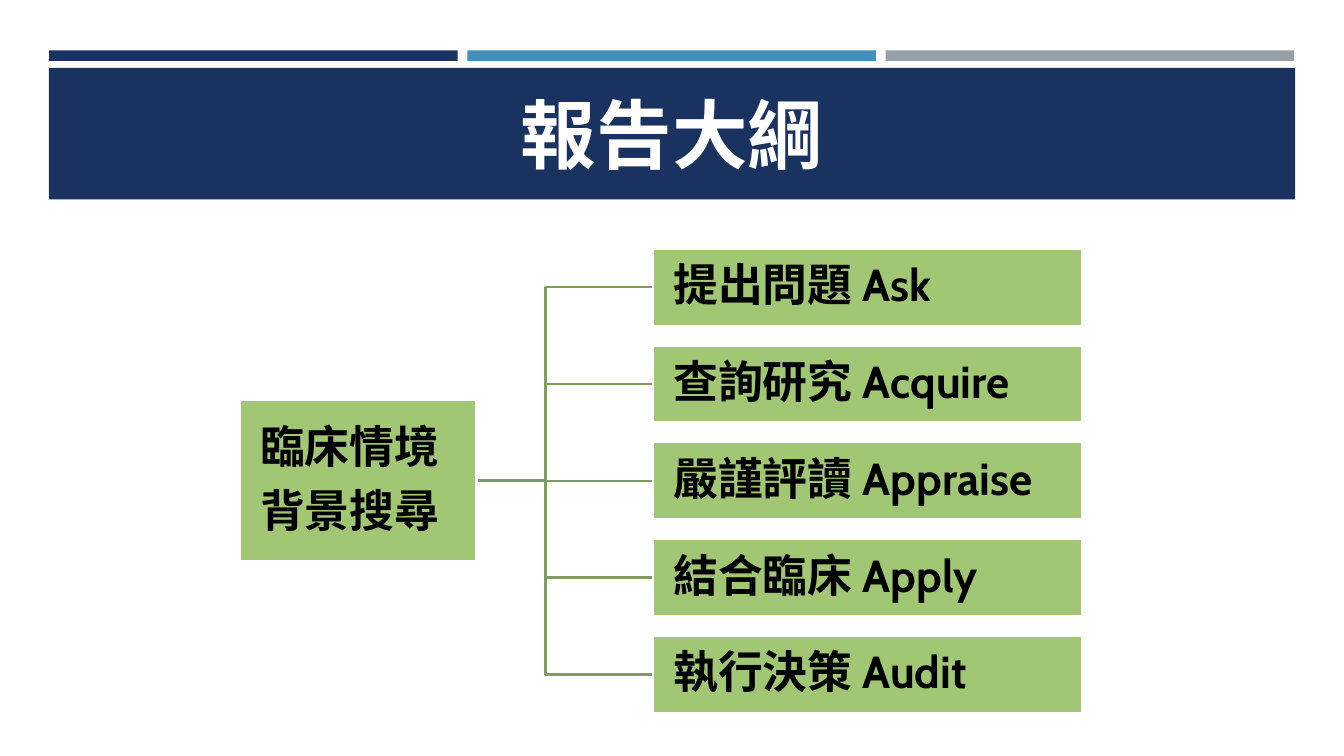
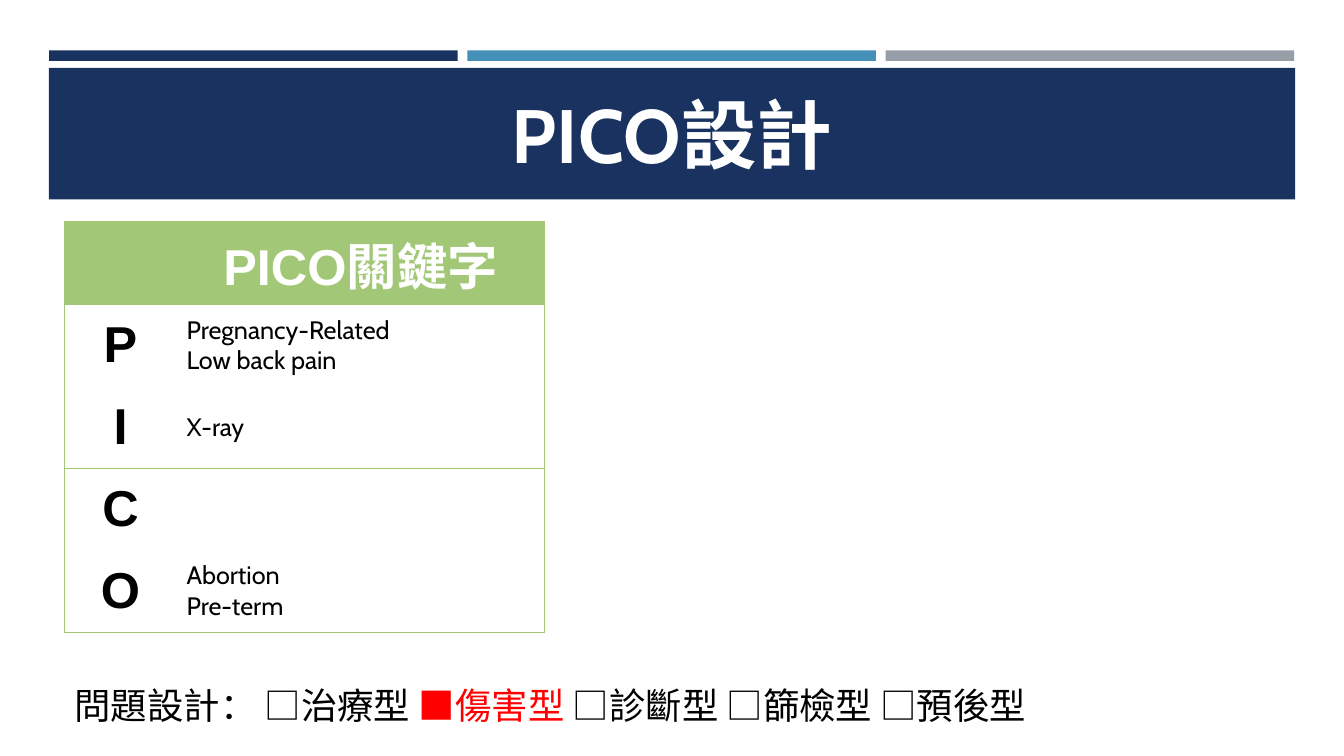
from dataclasses import dataclass

from lxml import etree
from pptx import Presentation
from pptx import util as u
from pptx.dml.color import RGBColor
from pptx.enum import shapes, text
from pptx.oxml import ns


@dataclass(frozen=True)
class Theme:
    navy: str = "1A3260"
    blue: str = "4590B8"
    grey: str = "969FA7"
    green: str = "A1C775"
    table_green: str = "A2C777"
    branch: str = "809C5E"
    white: str = "FFFFFF"
    black: str = "000000"
    red: str = "FF0000"
    font: str = "Cabin"
    table_font: str = "Arial"
    title_size: int = 54
    keyword_size: int = 36
    outline_size: int = 32
    question_size: int = 26
    body_size: int = 18
    line: float = 1.75
    border: float = 0.75


theme = Theme()
presentation = Presentation()
presentation.slide_width = u.Inches(13.333)
presentation.slide_height = u.Inches(7.5)
column = presentation.slide_width / 100
row = presentation.slide_height / 100
layout = presentation.slide_layouts[5]


def area(left, top, width, height):
    return int(left * column), int(top * row), int(width * column), int(height * row)


def write(frame, paragraphs, size, bold=False, font=theme.font, align=text.PP_ALIGN.LEFT):
    for index, runs in enumerate(paragraphs):
        paragraph = frame.paragraphs[0] if index == 0 else frame.add_paragraph()
        paragraph.alignment = align
        for words, color in runs:
            run = paragraph.add_run()
            run.text = words
            run.font.name = font
            run.font.size = u.Pt(size)
            run.font.bold = bold
            run.font.color.rgb = RGBColor.from_string(color)


slides = []
for heading in ("報告大綱", "PICO設計"):
    slide = presentation.slides.add_slide(layout)
    slides.append(slide)
    title = slide.shapes.title
    title.left, title.top, title.width, title.height = area(4.8, 10.27, 90.4, 14.8)
    title.text_frame.auto_size = text.MSO_AUTO_SIZE.NONE
    title.text_frame.vertical_anchor = text.MSO_ANCHOR.MIDDLE
    write(title.text_frame, [[(heading, theme.white)]], theme.title_size, True,
          align=text.PP_ALIGN.CENTER)
outline_slide, pico_slide = slides

bands = [(area(3.65 + 31.12 * index, 6.67, 30.4, 1.4), color)
         for index, color in enumerate((theme.navy, theme.blue, theme.grey))]
bands.append((area(3.63, 8.97, 92.74, 17.4), theme.navy))
for position, (box, color) in enumerate(bands, 2):
    band = outline_slide.shapes.add_shape(shapes.MSO_SHAPE.RECTANGLE, *box)
    band.shadow.inherit = False
    band.fill.solid()
    band.fill.fore_color.rgb = RGBColor.from_string(color)
    band.line.fill.background()
    layout.shapes.element.insert(position, band.element)

steps = ["提出問題 Ask", "查詢研究 Acquire", "嚴謹評讀 Appraise", "結合臨床 Apply", "執行決策 Audit"]
middle = 63.6
step_left, step_height, step_pitch = 48.6, 10.2, 12.8
root_height = 21.3
centres = [middle + (index - len(steps) // 2) * step_pitch for index in range(len(steps))]

for centre in centres:
    kind = shapes.MSO_CONNECTOR.STRAIGHT if centre == middle else shapes.MSO_CONNECTOR.ELBOW
    branch = outline_slide.shapes.add_connector(
        kind, int(32.6 * column), int(middle * row), int(step_left * column), int(centre * row))
    branch.line.color.rgb = RGBColor.from_string(theme.branch)
    branch.line.width = u.Pt(theme.line)
    etree.SubElement(branch.element.spPr, ns.qn("a:effectLst"))

boxes = [(area(17.85, middle - root_height / 2, 17.6, root_height), ["臨床情境", "背景搜尋"])]
boxes += [(area(step_left, centre - step_height / 2, 31.9, step_height), [words])
          for centre, words in zip(centres, steps)]
for box, lines in boxes:
    shape = outline_slide.shapes.add_shape(shapes.MSO_SHAPE.RECTANGLE, *box)
    shape.shadow.inherit = False
    shape.fill.solid()
    shape.fill.fore_color.rgb = RGBColor.from_string(theme.green)
    shape.line.color.rgb = RGBColor.from_string(theme.white)
    shape.line.width = u.Pt(theme.line)
    frame = shape.text_frame
    frame.word_wrap = True
    frame.vertical_anchor = text.MSO_ANCHOR.MIDDLE
    frame.margin_left = int(1.5 * column)
    frame.margin_right = frame.margin_top = frame.margin_bottom = u.Inches(0.02)
    write(frame, [[(words, theme.black)] for words in lines], theme.outline_size, True)
    for index, paragraph in enumerate(frame.paragraphs):
        paragraph.line_spacing = 0.9
        if index:
            paragraph.space_before = u.Pt(11.2)

keywords = [
    ("", ["PICO關鍵字"]),
    ("P", ["Pregnancy-Related", "Low back pain"]),
    ("I", ["X-ray"]),
    ("C", []),
    ("O", ["Abortion", "Pre-term"]),
]
column_shares = (8.33, 27.4)
row_share = 10.84
table = pico_slide.shapes.add_table(
    len(keywords), 2, *area(4.8, 29.3, sum(column_shares), row_share * len(keywords))).table
table.first_row = table.horz_banding = False
for index, share in enumerate(column_shares):
    table.columns[index].width = int(share * column)
ruled_edges = (0, 1, 3, len(keywords))
for row_index, (letter, terms) in enumerate(keywords):
    table.rows[row_index].height = int(row_share * row)
    header = row_index == 0
    for column_index, lines in enumerate(([letter] if letter else [], terms)):
        cell = table.cell(row_index, column_index)
        cell.vertical_anchor = text.MSO_ANCHOR.MIDDLE
        borders = {
            "a:lnL": column_index == 0,
            "a:lnR": column_index == 1,
            "a:lnT": row_index in ruled_edges,
            "a:lnB": row_index + 1 in ruled_edges,
        }
        properties = cell._tc.get_or_add_tcPr()
        for tag, ruled in borders.items():
            border = etree.SubElement(properties, ns.qn(tag), w=str(u.Pt(theme.border)))
            if ruled:
                fill = etree.SubElement(border, ns.qn("a:solidFill"))
                etree.SubElement(fill, ns.qn("a:srgbClr"), val=theme.table_green)
            else:
                etree.SubElement(border, ns.qn("a:noFill"))
        if header:
            cell.fill.solid()
            cell.fill.fore_color.rgb = RGBColor.from_string(theme.table_green)
        else:
            cell.fill.background()
        strong = header or column_index == 0
        color = theme.white if header else theme.black
        write(cell.text_frame, [[(words, color)] for words in lines],
              theme.keyword_size if strong else theme.body_size, strong,
              theme.table_font if strong else theme.font,
              text.PP_ALIGN.CENTER if strong else text.PP_ALIGN.LEFT)

question = pico_slide.shapes.add_textbox(*area(4.8, 89.73, 77, 7.2)).text_frame
question.word_wrap = True
write(question, [[
    ("問題設計： □治療型 ", theme.black),
    ("■傷害型", theme.red),
    (" □診斷型 □篩檢型 □預後型", theme.black),
]], theme.question_size)

presentation.save("out.pptx")
